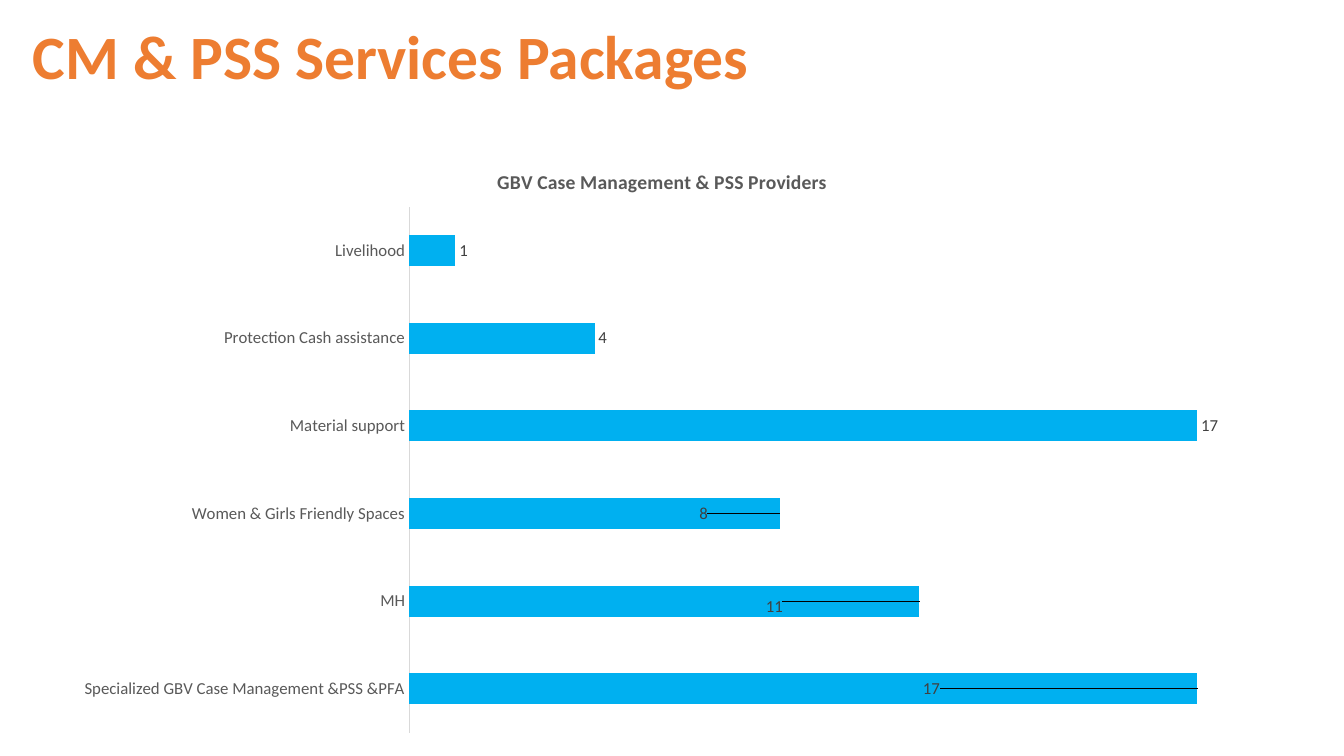
from lxml.etree import SubElement
from pptx import Presentation
from pptx.chart.data import CategoryChartData
from pptx.dml.color import RGBColor
from pptx.enum.chart import XL_CHART_TYPE, XL_LABEL_POSITION, XL_TICK_MARK
from pptx.enum.text import MSO_ANCHOR
from pptx.oxml.ns import qn
from pptx.util import Cm, Pt

TITLE = "CM & PSS Services Packages"
CHART_TITLE = "GBV Case Management & PSS Providers"
PROVIDERS = [
    ("Specialized GBV Case Management &PSS &PFA", 17),
    ("MH", 11),
    ("Women & Girls Friendly Spaces", 8),
    ("Material support", 17),
    ("Protection Cash assistance", 4),
    ("Livelihood", 1),
]
COLORS = {"title": "ED7D31", "bar": "00B0F0", "text": "595959",
          "label": "404040", "axis": "D9D9D9"}
TITLE_BOX = (0.58, 0.23, 31.37, 2.54)
CHART_BOX = (1.47, 3.53, 30.48, 15.24)
PLOT_LAYOUT = {"layoutTarget": "inner", "xMode": "edge", "yMode": "edge",
               "x": 0.29, "y": 0.11, "w": 0.69, "h": 0.87}
TITLE_LAYOUT = {"xMode": "edge", "yMode": "edge", "x": 0.36, "y": 0.04}
LABEL_SHIFTS = {0: (-0.23, 0), 1: (-0.13, 0.01), 2: (-0.07, 0)}
FONTS = {
    "title": {"size": Pt(44), "bold": True},
    "chart_title": {"size": Pt(14), "bold": True},
    "axis": {"size": Pt(12), "bold": False},
    "label": {"size": Pt(12), "bold": False},
}


def set_attrs(obj, values):
    for name, value in values.items():
        setattr(obj, name, value)


def set_font(font, style, color):
    set_attrs(font, {"name": "Calibri", **FONTS[style]})
    font.color.rgb = RGBColor.from_string(COLORS[color])


def set_layout(parent, after, values):
    for old in parent.findall(qn("c:layout")):
        parent.remove(old)
    layout = SubElement(parent, qn("c:layout"))
    manual = SubElement(layout, qn("c:manualLayout"))
    for name, value in values.items():
        SubElement(manual, qn(f"c:{name}")).set("val", str(value))
    if after is None:
        parent.insert(0, layout)
    else:
        after.addnext(layout)


def add_title(s):
    tf = s.shapes.add_textbox(*map(Cm, TITLE_BOX)).text_frame
    set_attrs(tf, {"word_wrap": True, "vertical_anchor": MSO_ANCHOR.MIDDLE})
    p = tf.paragraphs[0]
    p.line_spacing = 0.9
    r = p.add_run()
    r.text = TITLE
    set_font(r.font, "title", "title")


def add_providers_chart(s):
    data = CategoryChartData()
    data.categories = [name for name, _ in PROVIDERS]
    data.add_series("Series 1", [count for _, count in PROVIDERS])
    chart = s.shapes.add_chart(
        XL_CHART_TYPE.BAR_CLUSTERED, *map(Cm, CHART_BOX), data).chart
    set_attrs(chart, {"has_legend": False, "has_title": True})
    set_font(chart.font, "axis", "text")

    p = chart.chart_title.text_frame.paragraphs[0]
    r = p.add_run()
    r.text = CHART_TITLE
    set_font(r.font, "chart_title", "chart_title" if "chart_title" in COLORS else "text")
    title = chart.chart_title._element
    set_layout(title, title.find(qn("c:tx")), TITLE_LAYOUT)
    set_layout(chart.plots[0]._element.getparent(), None, PLOT_LAYOUT)

    cat = chart.category_axis
    set_attrs(cat, {"major_tick_mark": XL_TICK_MARK.NONE, "has_major_gridlines": False})
    set_font(cat.tick_labels.font, "axis", "text")
    cat.format.line.width = Pt(0.75)
    cat.format.line.color.rgb = RGBColor.from_string(COLORS["axis"])
    set_attrs(chart.value_axis, {"visible": False, "has_major_gridlines": False,
                                 "minimum_scale": 0, "maximum_scale": 18})

    plot = chart.plots[0]
    set_attrs(plot, {"gap_width": 182, "vary_by_categories": False})
    bars = plot.series[0]
    bars.format.fill.solid()
    bars.format.fill.fore_color.rgb = RGBColor.from_string(COLORS["bar"])
    labels = bars.data_labels
    set_attrs(labels, {"show_value": True, "position": XL_LABEL_POSITION.OUTSIDE_END})
    set_font(labels.font, "label", "label")
    for i, (dx, dy) in LABEL_SHIFTS.items():
        label = bars.points[i].data_label
        label.position = XL_LABEL_POSITION.OUTSIDE_END
        set_font(label.font, "label", "label")
    for item in labels._element.findall(qn("c:dLbl")):
        idx = item.find(qn("c:idx"))
        dx, dy = LABEL_SHIFTS[int(idx.get("val"))]
        set_layout(item, idx, {"x": dx, "y": dy})


def main():
    """Build the services packages slide."""
    prs = Presentation()
    set_attrs(prs, {"slide_width": Cm(33.87), "slide_height": Cm(19.05)})
    s = prs.slides.add_slide(prs.slide_layouts[6])
    add_title(s)
    add_providers_chart(s)
    prs.save("out.pptx")


if __name__ == "__main__":
    main()
